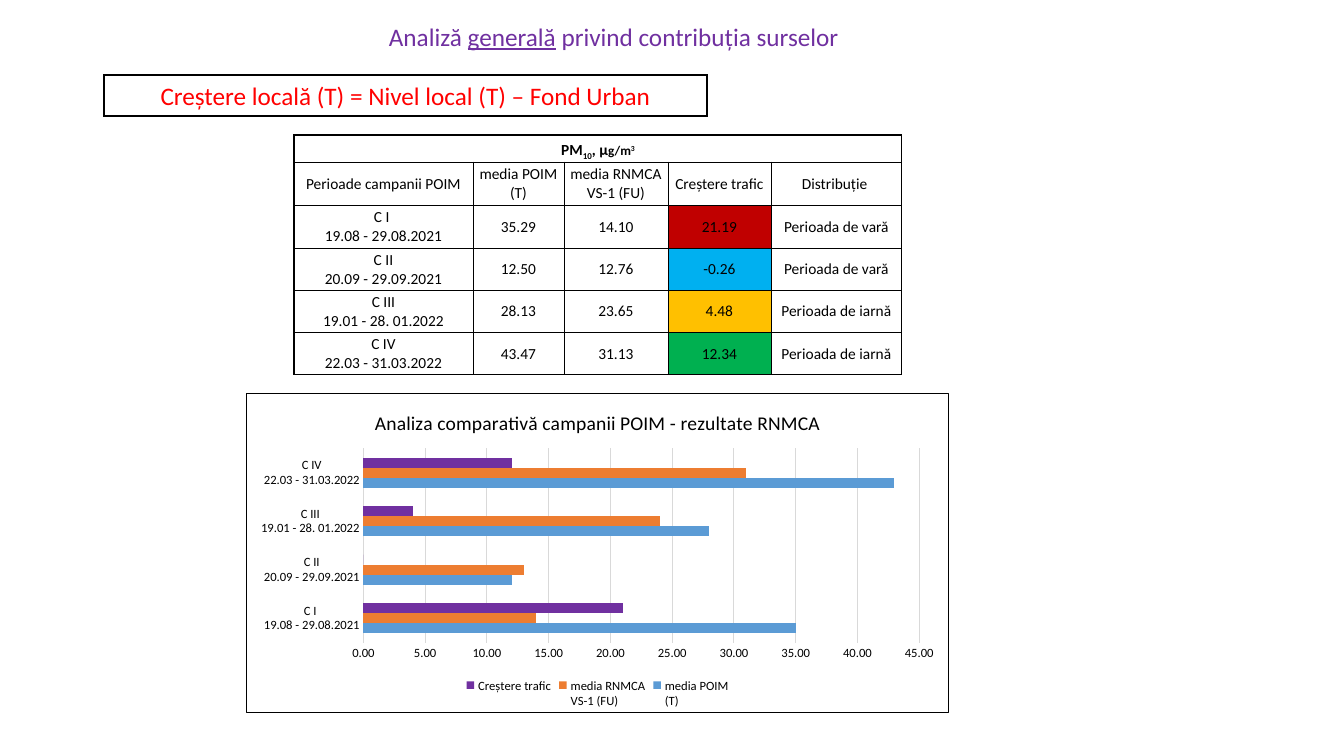
import dataclasses

import pptx
import pptx.chart.data
import pptx.dml.color
import pptx.enum.chart
import pptx.enum.shapes
import pptx.enum.text
import pptx.oxml
import pptx.oxml.ns
import pptx.util

RGBColor = pptx.dml.color.RGBColor
BLACK = RGBColor(0x00, 0x00, 0x00)
WHITE = RGBColor(0xFF, 0xFF, 0xFF)
GRID_GREY = RGBColor(0xD9, 0xD9, 0xD9)
RED = RGBColor(0xFF, 0x00, 0x00)
DARK_RED = RGBColor(0xC0, 0x00, 0x00)
SKY = RGBColor(0x00, 0xB0, 0xF0)
AMBER = RGBColor(0xFF, 0xC0, 0x00)
GREEN = RGBColor(0x00, 0xB0, 0x50)
PURPLE = RGBColor(0x70, 0x30, 0xA0)
ORANGE = RGBColor(0xED, 0x7D, 0x31)
BLUE = RGBColor(0x5B, 0x9B, 0xD5)

FONT = "Calibri"
EMU_PER_PX = 914400 / 100.8
CENTER = pptx.enum.text.PP_ALIGN.CENTER


@dataclasses.dataclass(frozen=True)
class Campaign:
    name: str
    dates: str
    local: float
    urban: float
    growth: float
    season: str
    growth_color: RGBColor


@dataclasses.dataclass(frozen=True)
class Piece:
    text: str
    size: float = 11
    baseline: int = 0
    underline: bool = False


CAMPAIGNS = [
    Campaign("C I ", "19.08 - 29.08.2021", 35.29, 14.10, 21.19, "Perioada de vară", DARK_RED),
    Campaign("C II", "20.09 - 29.09.2021", 12.50, 12.76, -0.26, "Perioada de vară", SKY),
    Campaign("C III", "19.01 - 28. 01.2022", 28.13, 23.65, 4.48, "Perioada de iarnă", AMBER),
    Campaign("C IV", "22.03 - 31.03.2022", 43.47, 31.13, 12.34, "Perioada de iarnă", GREEN),
]
LOCAL, URBAN, GROWTH = "media POIM\n(T)", "media RNMCA\nVS-1 (FU)", "Creștere trafic"
HEADINGS = ["Perioade campanii POIM", LOCAL, URBAN, GROWTH, "Distribuție "]
TITLE = [Piece("Analiză ", 18), Piece("generală", 18, underline=True),
         Piece(" privind contribuția surselor", 18)]
UNIT = [Piece("PM"), Piece("10", baseline=-25), Piece(", µ"),
        Piece("g/m", 9.4), Piece("3", 9.4, baseline=30)]
COLUMN_WIDTHS = [179, 91, 104, 103, 131]
ROW_HEIGHTS = [27, 43, 43, 42, 42, 43]
CHART_WIDTH, CHART_HEIGHT = 703, 320


def px(length: int) -> int:
    return round(length * EMU_PER_PX)


def style_font(font, size: float, color: RGBColor = BLACK, bold: bool = False) -> None:
    font.name, font.size, font.bold = FONT, pptx.util.Pt(size), bold
    font.color.rgb = color


def add_pieces(paragraph, pieces: list[Piece], color: RGBColor, bold: bool = False) -> None:
    for piece in pieces:
        run = paragraph.add_run()
        run.text = piece.text
        style_font(run.font, piece.size, color, bold)
        run.font.underline = piece.underline
        if piece.baseline:
            run.font._element.set("baseline", str(piece.baseline * 1000))


def line_xml(tag: str, points: float) -> str:
    return (f'<{tag} {pptx.oxml.ns.nsdecls("a")} w="{round(points * 12700)}">'
            f'<a:solidFill><a:srgbClr val="{BLACK}"/></a:solidFill></{tag}>')


def add_borders(cell, row: int, column: int) -> None:
    last_row, last_column = len(ROW_HEIGHTS) - 1, len(COLUMN_WIDTHS) - 1
    outer = {"a:lnL": column == 0, "a:lnR": row == 0 or column == last_column,
             "a:lnT": row == 0, "a:lnB": row == last_row}
    properties = cell._tc.get_or_add_tcPr()
    for place, (tag, is_outer) in enumerate(outer.items()):
        border = pptx.oxml.parse_xml(line_xml(tag, 1 if is_outer else 0.5))
        properties.insert(place, border)


def add_heading(slide) -> None:
    heading = slide.shapes.add_textbox(px(379), px(16), px(473), px(40))
    heading.text_frame.word_wrap = False
    add_pieces(heading.text_frame.paragraphs[0], TITLE, PURPLE)


def add_formula(slide) -> None:
    formula = slide.shapes.add_shape(pptx.enum.shapes.MSO_SHAPE.RECTANGLE,
                                     px(104), px(75), px(603), px(41))
    formula.shadow.inherit = False
    formula.fill.solid()
    formula.fill.fore_color.rgb = WHITE
    formula.line.color.rgb = BLACK
    formula.line.width = pptx.util.Pt(1)
    # Sharp corners
    formula.line._get_or_add_ln().append(pptx.oxml.parse_xml(
        f'<a:miter {pptx.oxml.ns.nsdecls("a")} lim="800000"/>'))
    formula.text_frame.text = "Creștere locală (T) = Nivel local (T) – Fond Urban"
    paragraph = formula.text_frame.paragraphs[0]
    paragraph.alignment = CENTER
    style_font(paragraph.runs[0].font, 18, RED)


def add_results_table(slide) -> None:
    rows = [[""] * len(HEADINGS), HEADINGS]
    rows += [[f"{c.name}\n{c.dates}", f"{c.local:.2f}", f"{c.urban:.2f}",
              f"{c.growth:.2f}", c.season] for c in CAMPAIGNS]
    results = slide.shapes.add_table(len(rows), len(HEADINGS), px(294), px(135),
                                     px(sum(COLUMN_WIDTHS)), px(sum(ROW_HEIGHTS))).table
    results.first_row = results.horz_banding = False
    for column, width in zip(results.columns, COLUMN_WIDTHS):
        column.width = px(width)
    for row, height in zip(results.rows, ROW_HEIGHTS):
        row.height = px(height)
    results.cell(0, 0).merge(results.cell(0, len(HEADINGS) - 1))

    for r, texts in enumerate(rows):
        for c, text in enumerate(texts):
            cell = results.cell(r, c)
            cell.margin_left = cell.margin_right = cell.margin_top = px(1)
            cell.margin_bottom = 0
            cell.vertical_anchor = pptx.enum.text.MSO_ANCHOR.MIDDLE
            if r > 1 and HEADINGS[c] == GROWTH:
                cell.fill.solid()
                cell.fill.fore_color.rgb = CAMPAIGNS[r - 2].growth_color
            else:
                cell.fill.background()
            add_borders(cell, r, c)
            paragraph = cell.text_frame.paragraphs[0]
            paragraph.text = text.replace("\n", "\v")
            paragraph.alignment = CENTER
            for run in paragraph.runs:
                style_font(run.font, 11)

    unit = results.cell(0, 0)
    unit.vertical_anchor = pptx.enum.text.MSO_ANCHOR.BOTTOM
    add_pieces(unit.text_frame.paragraphs[0], UNIT, BLACK, bold=True)


def set_layout(parent, place: int, target: str = "", **lengths: int) -> None:
    for old in parent.xpath("c:layout"):
        parent.remove(old)
    totals = {"x": CHART_WIDTH, "y": CHART_HEIGHT, "w": CHART_WIDTH, "h": CHART_HEIGHT}
    modes = "".join(f'<c:{side}Mode val="edge"/>' for side in "xy")
    sizes = "".join(f'<c:{key} val="{length / totals[key]:.4f}"/>'
                    for key, length in lengths.items())
    parent.insert(place, pptx.oxml.parse_xml(
        f'<c:layout {pptx.oxml.ns.nsdecls("c")}><c:manualLayout>'
        f'{target}{modes}{sizes}</c:manualLayout></c:layout>'))


def add_comparison_chart(slide) -> None:
    series = [(LOCAL, [round(c.local) for c in CAMPAIGNS], BLUE),
              (URBAN, [round(c.urban) for c in CAMPAIGNS], ORANGE),
              (GROWTH, [round(c.growth) for c in CAMPAIGNS], PURPLE)]
    data = pptx.chart.data.CategoryChartData(number_format="0.00")
    data.categories = [f"{c.name}\n{c.dates}" for c in CAMPAIGNS]
    for name, values, _ in series:
        data.add_series(name, values)
    chart = slide.shapes.add_chart(pptx.enum.chart.XL_CHART_TYPE.BAR_CLUSTERED, px(246),
                                   px(393), px(CHART_WIDTH), px(CHART_HEIGHT), data).chart
    style_font(chart.font, 10)

    # Title and legend
    chart.has_title = True
    chart.chart_title.text_frame.text = "Analiza comparativă campanii POIM - rezultate RNMCA"
    style_font(chart.chart_title.text_frame.paragraphs[0].runs[0].font, 14)
    chart.has_legend = True
    chart.legend.position = pptx.enum.chart.XL_LEGEND_POSITION.BOTTOM
    chart.legend.include_in_layout = False
    style_font(chart.legend.font, 9)

    # Bars
    plot = chart.plots[0]
    plot.gap_width = 182
    plot.vary_by_categories = False
    for bars, (_, _, color) in zip(plot.series, series):
        bars.invert_if_negative = False
        bars.format.fill.solid()
        bars.format.fill.fore_color.rgb = color

    # Axes
    values_axis, periods_axis = chart.value_axis, chart.category_axis
    for axis in (values_axis, periods_axis):
        axis.major_tick_mark = axis.minor_tick_mark = pptx.enum.chart.XL_TICK_MARK.NONE
        style_font(axis.tick_labels.font, 9)
    values_axis.minimum_scale, values_axis.maximum_scale, values_axis.major_unit = 0, 45, 5
    values_axis.tick_labels.number_format = "0.00"
    values_axis.tick_labels.number_format_is_linked = False
    values_axis.format.line.fill.background()
    for line in (values_axis.major_gridlines.format.line, periods_axis.format.line):
        line.color.rgb = GRID_GREY
        line.width = pptx.util.Pt(0.75)

    # Frame and inner placement
    root = chart.element
    root.xpath("c:txPr")[0].addprevious(pptx.oxml.parse_xml(
        f'<c:spPr {pptx.oxml.ns.nsdecls("c", "a")}><a:solidFill><a:srgbClr val="{WHITE}"/>'
        f'</a:solidFill>{line_xml("a:ln", 1)}</c:spPr>'))
    set_layout(root.xpath("c:chart/c:title")[0], 1, x=125, y=12)
    set_layout(root.xpath("c:chart/c:plotArea")[0], 0, '<c:layoutTarget val="inner"/>',
               x=117, y=55, w=557, h=195)


def main() -> None:
    deck = pptx.Presentation()
    deck.slide_width, deck.slide_height = px(1344), px(756)
    slide = deck.slides.add_slide(deck.slide_layouts[6])
    add_formula(slide)
    add_heading(slide)
    add_results_table(slide)
    add_comparison_chart(slide)
    deck.save("out.pptx")


if __name__ == "__main__":
    main()
